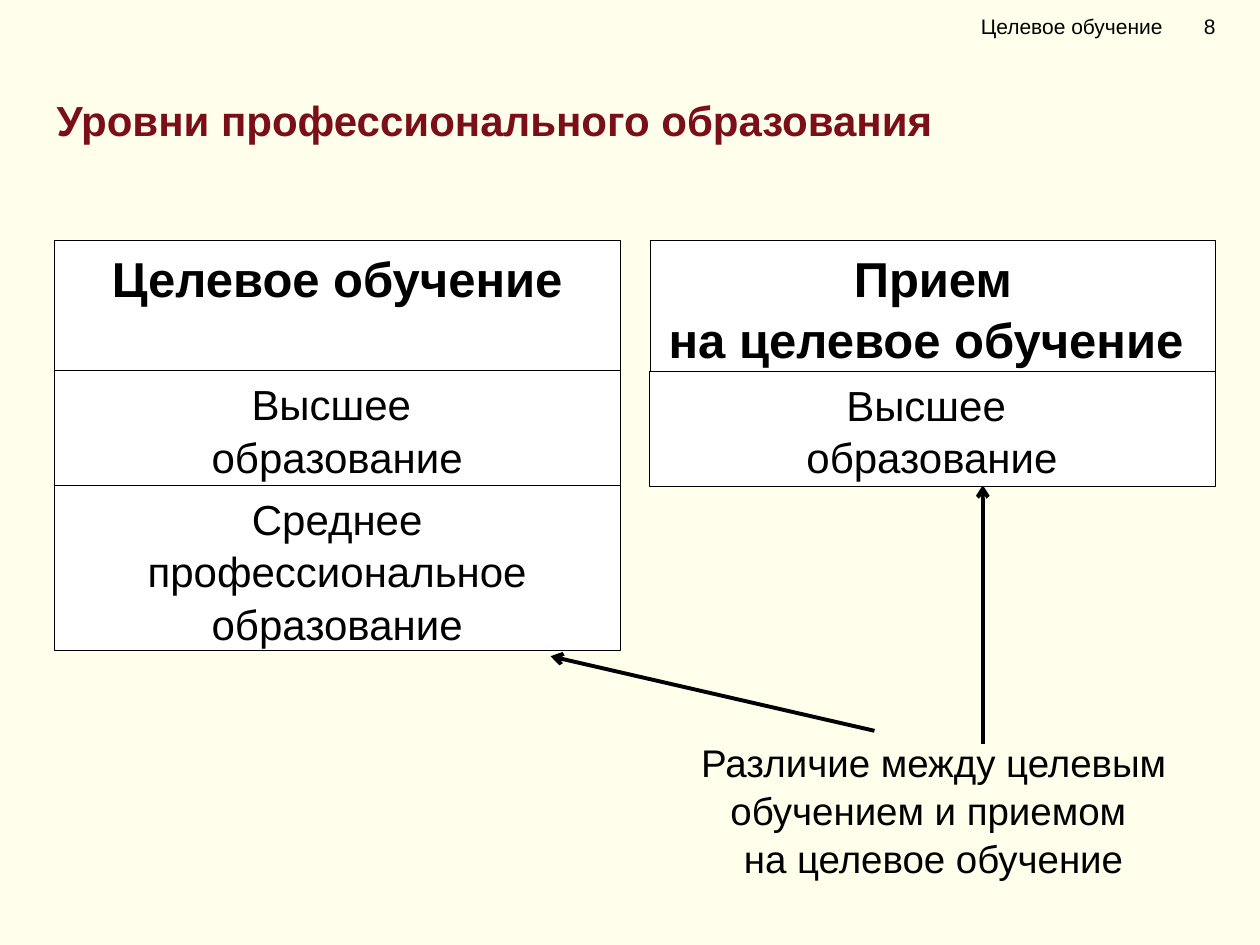
"""Build the slide comparing targeted training with targeted admission."""
from lxml.etree import SubElement
from pptx import Presentation
from pptx.dml.color import RGBColor
from pptx.enum.shapes import MSO_CONNECTOR, MSO_SHAPE
from pptx.enum.text import MSO_ANCHOR, PP_ALIGN
from pptx.oxml.ns import qn
from pptx.util import Pt

CREAM = RGBColor(0xFF, 0xFF, 0xEB)
WHITE = RGBColor(0xFF, 0xFF, 0xFF)
BLACK = RGBColor(0x00, 0x00, 0x00)
MAROON = RGBColor(0x7B, 0x0F, 0x19)
LEFT_X, RIGHT_X, BOX_W = 31, 371.4, 323.3


def write(sp, lines, size, color=BLACK, bold=False, align=PP_ALIGN.CENTER,
          anchor=MSO_ANCHOR.TOP):
    tf = sp.text_frame
    frame = {"word_wrap": True, "vertical_anchor": anchor,
             "margin_left": Pt(7.2), "margin_right": Pt(7.2),
             "margin_top": Pt(3.6), "margin_bottom": Pt(3.6)}
    for name, value in frame.items():
        setattr(tf, name, value)
    for i, line in enumerate(lines):
        p = tf.add_paragraph() if i else tf.paragraphs[0]
        p.alignment = align
        p.line_spacing = 1.04
        r = p.add_run()
        r.text = line
        r.font.color.rgb = color
        for name, value in {"name": "Arial", "size": Pt(size), "bold": bold}.items():
            setattr(r.font, name, value)


prs = Presentation()
prs.slide_width, prs.slide_height = Pt(720), Pt(540)
s = prs.slides.add_slide(prs.slide_layouts[5])
s.background.fill.solid()
s.background.fill.fore_color.rgb = CREAM

title = s.shapes.title
place = {"left": 25.2, "top": 49, "width": 669, "height": 34}
for name, value in place.items():
    setattr(title, name, Pt(value))
write(title, ["Уровни профессионального образования"], 24, MAROON, True, PP_ALIGN.LEFT)

header = s.shapes.add_textbox(Pt(553.4), Pt(0), Pt(166.6), Pt(28.8))
write(header, ["Целевое обучение\t8"], 12, align=PP_ALIGN.LEFT, anchor=MSO_ANCHOR.MIDDLE)
tabs = SubElement(header.text_frame.paragraphs[0]._p.get_or_add_pPr(), qn("a:tabLst"))
SubElement(tabs, qn("a:tab"), pos=str(Pt(127.4)), algn="l")

note = s.shapes.add_textbox(Pt(366.5), Pt(417.6), Pt(334), Pt(87))
write(note, ["Различие между целевым обучением и приемом ", "на целевое обучение"], 22)

arrows = [(499.7, 417.6, 314.6, 375), (561.6, 425, 561.6, 277.2)]
for ends in arrows:
    cx = s.shapes.add_connector(MSO_CONNECTOR.STRAIGHT, *[Pt(v) for v in ends])
    cx.line.color.rgb = BLACK
    cx.line.width = Pt(2.25)
    SubElement(cx.line._get_or_add_ln(), qn("a:tailEnd"), type="arrow")
    SubElement(cx._element.spPr, qn("a:effectLst"))

higher = ["Высшее ", "образование"]
boxes = [
    (LEFT_X, 137.3, 74.6, 28, True, ["Целевое обучение"]),
    (RIGHT_X, 137.3, 74.6, 28, True, ["Прием", "на целевое обучение "]),
    (LEFT_X, 211.8, 65.5, 24, False, higher),
    (LEFT_X, 277.3, 94.4, 24, False, ["Среднее профессиональное образование"]),
    (RIGHT_X - 0.5, 212.2, 65.5, 24, False, higher),
]
for x, y, h, size, bold, lines in boxes:
    sp = s.shapes.add_shape(MSO_SHAPE.RECTANGLE, Pt(x), Pt(y), Pt(BOX_W), Pt(h))
    sp.shadow.inherit = False
    sp.fill.solid()
    sp.fill.fore_color.rgb = WHITE
    sp.line.color.rgb = BLACK
    sp.line.width = Pt(0.25)
    write(sp, lines, size, bold=bold)

prs.save("out.pptx")
